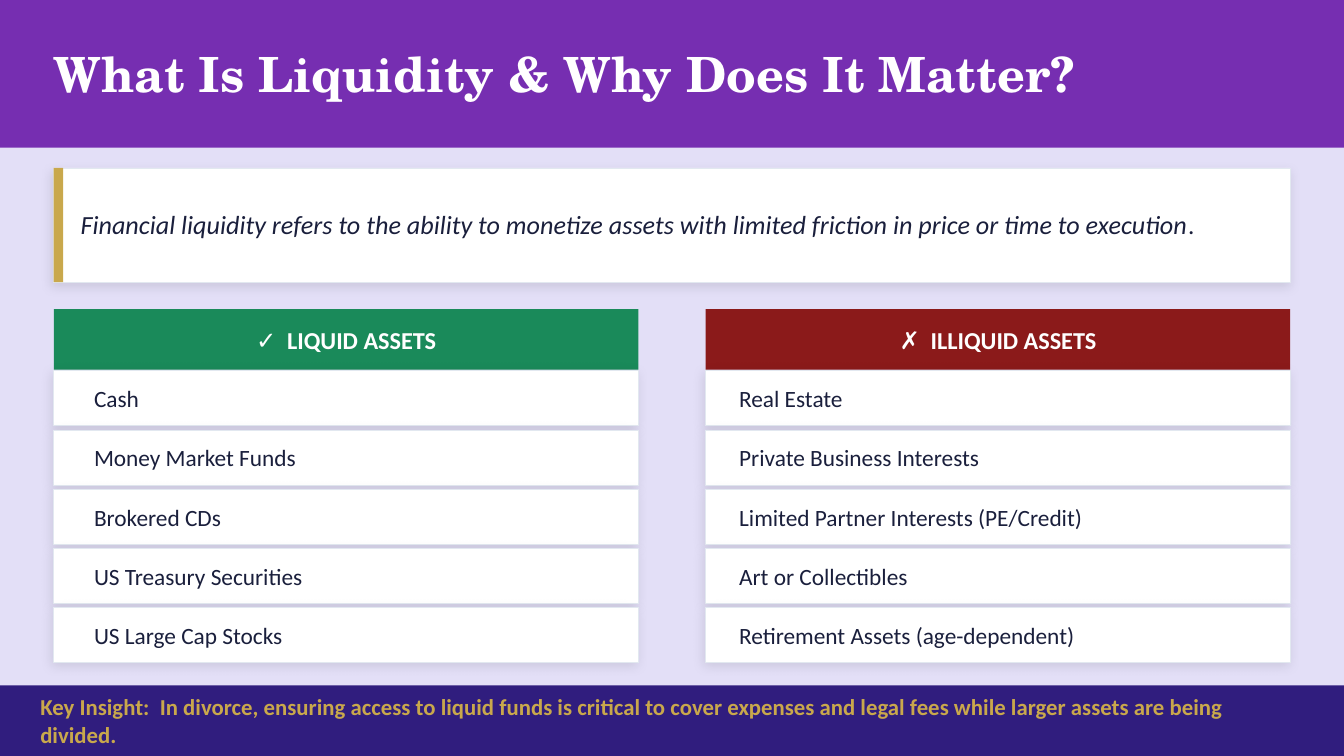
"""Build the slide comparing liquid and illiquid assets."""
from lxml import etree
from pptx import Presentation
from pptx.dml.color import RGBColor
from pptx.enum import shapes, text
from pptx.oxml import ns
from pptx.util import Pt

TITLE = "What Is Liquidity & Why Does It Matter?"
DEFINITION = [
    ("Financial liquidity refers to the ability to monetize assets "
     "with limited friction in price or time to execution", 14),
    (".", 13.5),
]
COLUMNS = [
    {"heading": "✓  LIQUID ASSETS", "color": "1A8A5A", "left": 28.8, "indent": 21.6,
     "assets": ["Cash", "Money Market Funds", "Brokered CDs",
                "US Treasury Securities", "US Large Cap Stocks"]},
    {"heading": "✗  ILLIQUID ASSETS", "color": "8B1A1A", "left": 378, "indent": 18,
     "assets": ["Real Estate", "Private Business Interests",
                "Limited Partner Interests (PE/Credit)", "Art or Collectibles",
                "Retirement Assets (age-dependent)"]},
]
INSIGHT = ("Key Insight:  In divorce, ensuring access to liquid funds is critical to cover "
           "expenses and legal fees while larger assets are being divided.")

WIDTH, HEIGHT = 720, 405
MARGIN = 28.8
CONTENT_WIDTH = WIDTH - 2 * MARGIN
COLUMN_WIDTH = 313.2
HEADING_TOP, HEADING_HEIGHT = 165.6, 32.4
ROW_TOP, ROW_HEIGHT, ROW_STEP = 198.72, 29.52, 31.68
WHITE, INK, GOLD = "FFFFFF", "1A1F3C", "C9A84C"
BACKGROUND, PURPLE, NAVY, BORDER = "E3DFF7", "762EB1", "301D7E", "E2E8F0"
BODY_FONT, TITLE_FONT = "Calibri", "TeX Gyre Schola"


def rgb(value):
    return RGBColor.from_string(value)


def add_block(slide, left, top, width, height, color):
    shape = slide.shapes.add_shape(
        shapes.MSO_SHAPE.RECTANGLE, Pt(left), Pt(top), Pt(width), Pt(height))
    shape.shadow.inherit = False
    shape.fill.solid()
    shape.fill.fore_color.rgb = rgb(color)
    shape.line.fill.background()
    return shape


def add_card(slide, left, top, width, height):
    shape = add_block(slide, left, top, width, height, WHITE)
    shape.line.color.rgb = rgb(BORDER)
    shape.line.width = Pt(0.5)
    effects = shape.element.spPr.find(ns.qn("a:effectLst"))
    shadow = etree.SubElement(
        effects, ns.qn("a:outerShdw"), blurRad=str(Pt(6)), dist=str(Pt(2)),
        dir=str(135 * 60000), algn="bl", rotWithShape="0")
    shade = etree.SubElement(shadow, ns.qn("a:srgbClr"), val="000000")
    etree.SubElement(shade, ns.qn("a:alpha"), val="10000")


def add_text(slide, left, top, width, height, runs, color,
             font=BODY_FONT, bold=False, italic=False, centered=False):
    box = slide.shapes.add_textbox(Pt(left), Pt(top), Pt(width), Pt(height))
    frame = box.text_frame
    frame.word_wrap = True
    frame.vertical_anchor = text.MSO_ANCHOR.MIDDLE
    frame.margin_left = frame.margin_top = frame.margin_right = frame.margin_bottom = 0
    paragraph = frame.paragraphs[0]
    if centered:
        paragraph.alignment = text.PP_ALIGN.CENTER
    paragraph.font.name = font
    paragraph.font.bold = bold
    paragraph.font.italic = italic
    paragraph.font.color.rgb = rgb(color)
    paragraph.font.size = Pt(runs[0][1])
    for words, size in runs:
        run = paragraph.add_run()
        run.text = words
        if size != runs[0][1]:
            run.font.size = Pt(size)


def add_column(slide, column):
    left = column["left"]
    heading_area = (left, HEADING_TOP, COLUMN_WIDTH, HEADING_HEIGHT)
    add_block(slide, *heading_area, column["color"])
    add_text(slide, *heading_area, [(column["heading"], 13)], WHITE, bold=True, centered=True)
    for index, asset in enumerate(column["assets"]):
        top = ROW_TOP + index * ROW_STEP
        add_card(slide, left, top, COLUMN_WIDTH, ROW_HEIGHT)
        add_text(slide, left + column["indent"], top + 2.16, 288, 25.2, [(asset, 12.5)], INK)


def main():
    presentation = Presentation()
    presentation.slide_width, presentation.slide_height = Pt(WIDTH), Pt(HEIGHT)
    slide = presentation.slides.add_slide(presentation.slide_layouts[6])
    slide.background.fill.solid()
    slide.background.fill.fore_color.rgb = rgb(BACKGROUND)

    add_block(slide, 0, 0, WIDTH, 79.2, PURPLE)
    add_text(slide, MARGIN, 12.96, CONTENT_WIDTH, 51.84, [(TITLE, 26)], WHITE,
             font=TITLE_FONT, bold=True)

    add_card(slide, MARGIN, 90, CONTENT_WIDTH, 61.2)
    add_block(slide, MARGIN, 90, 5.04, 61.2, GOLD)
    add_text(slide, 43.2, 95.04, 633.6, 50.4, DEFINITION, INK, italic=True)

    for column in COLUMNS:
        add_column(slide, column)

    add_block(slide, 0, 367.2, WIDTH, HEIGHT - 367.2, NAVY)
    add_text(slide, 21.6, 369.36, 676.8, 33.12, [(INSIGHT, 12.2)], GOLD, bold=True)
    presentation.save("out.pptx")


if __name__ == "__main__":
    main()
